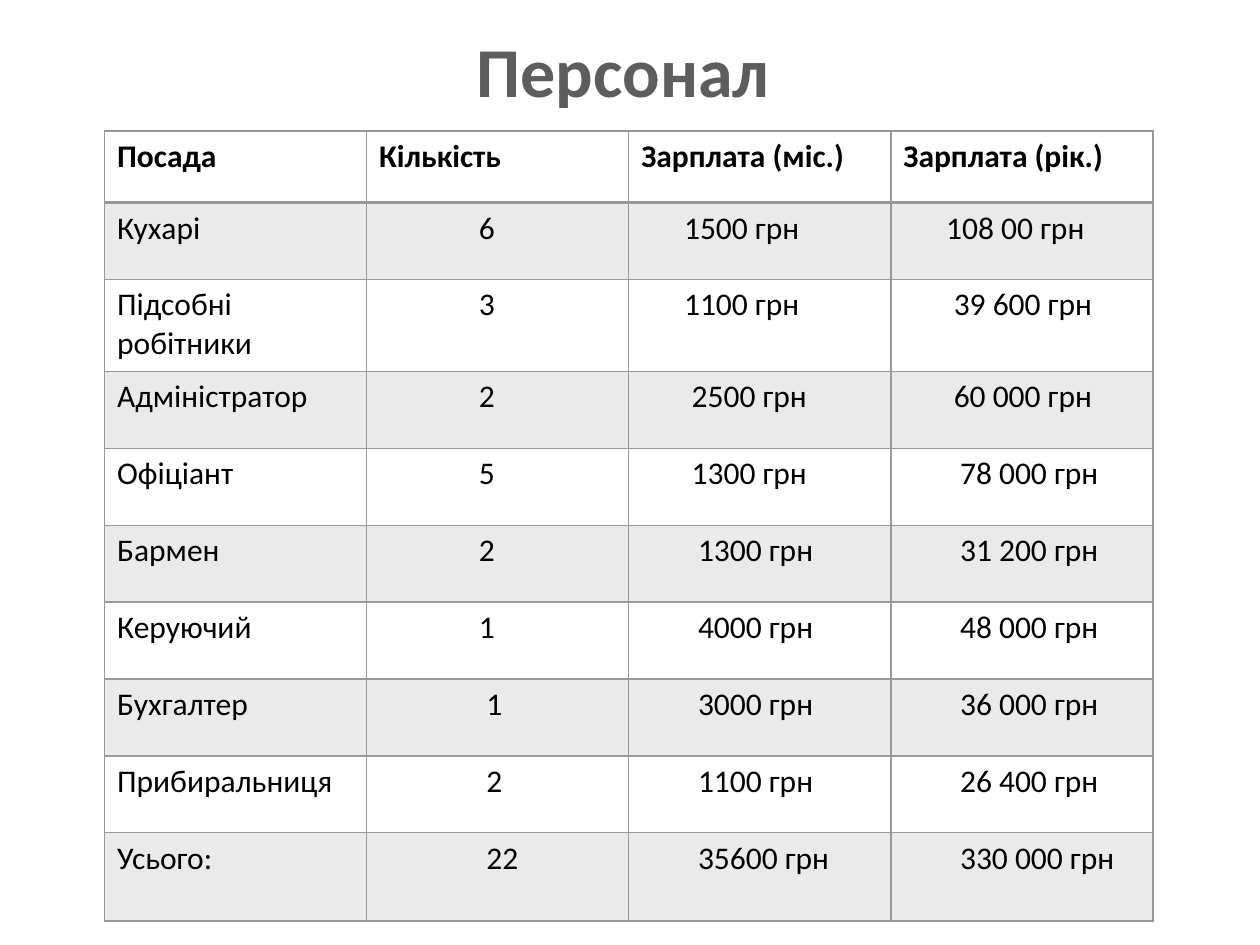
from dataclasses import dataclass
from typing import Any

from lxml import etree
from pptx import Presentation
from pptx import util as u
from pptx.dml.color import RGBColor
from pptx.enum import text as t
from pptx.oxml import ns

HEADINGS = ["Посада", "Кількість", "Зарплата (міс.)", "Зарплата (рік.)"]
STAFF = [
    ("Кухарі", "6", "1500 грн", "108 00 грн"),
    ("Підсобні робітники", "3", "1100 грн", "39 600 грн"),
    ("Адміністратор", "2", "2500 грн", "60 000 грн"),
    ("Офіціант", "5", "1300 грн", "78 000 грн"),
    ("Бармен", "2", "1300 грн", "31 200 грн"),
    ("Керуючий", "1", "4000 грн", "48 000 грн"),
    ("Бухгалтер", "1", "3000 грн", "36 000 грн"),
    ("Прибиральниця", "2", "1100 грн", "26 400 грн"),
    ("Усього:", "22", "35600 грн", "330 000 грн"),
]
INDENTS = [
    [0] * 9,
    [0.79] * 6 + [0.85] * 3,
    [0.34] * 2 + [0.4] * 2 + [0.45] * 5,
    [0.34] + [0.4] * 2 + [0.45] * 6,
]
ROW_HEIGHTS = [0.57, 0.61, 0.73] + [0.61] * 6 + [0.7]
COLUMN_WIDTH = 2.08


def color(value):
    return RGBColor.from_string(value)


def write(frame, content, *, size, fill, font, bold=False, align=t.PP_ALIGN.LEFT):
    paragraph = frame.paragraphs[0]
    paragraph.alignment = align
    run = paragraph.add_run()
    run.text = content
    run.font.name = font
    run.font.size = u.Pt(size)
    run.font.bold = bold
    run.font.color.rgb = color(fill)


@dataclass
class SlideBuilder:
    slide: Any
    font: str = "Calibri"
    title_color: str = "5D5D5D"
    text_color: str = "000000"
    grid_color: str = "999999"
    band_opacity: int = 20

    def title(self, content, left, top, width, height):
        shape = self.slide.shapes.title
        shape.left, shape.top = u.Inches(left), u.Inches(top)
        shape.width, shape.height = u.Inches(width), u.Inches(height)
        frame = shape.text_frame
        frame.word_wrap = False
        frame.auto_size = t.MSO_AUTO_SIZE.NONE
        frame.vertical_anchor = t.MSO_ANCHOR.TOP
        write(frame, content, size=40, fill=self.title_color, font=self.font,
              bold=True, align=t.PP_ALIGN.CENTER)

    def borders(self, cell, bottom):
        properties = cell._tc.get_or_add_tcPr()
        for position, side in enumerate(("L", "R", "T", "B")):
            width = bottom if side == "B" else 1
            line = etree.Element(ns.qn(f"a:ln{side}"), w=str(u.Pt(width)))
            fill = etree.SubElement(line, ns.qn("a:solidFill"))
            etree.SubElement(fill, ns.qn("a:srgbClr"), val=self.grid_color)
            properties.insert(position, line)

    def band(self, cell):
        cell.fill.solid()
        cell.fill.fore_color.rgb = color(self.grid_color)
        value = cell._tc.tcPr.find(f"{ns.qn('a:solidFill')}/{ns.qn('a:srgbClr')}")
        etree.SubElement(value, ns.qn("a:alpha"), val=str(self.band_opacity * 1000))

    def table(self, rows, left, top):
        columns = len(rows[0])
        table = self.slide.shapes.add_table(
            len(rows), columns, u.Inches(left), u.Inches(top),
            u.Inches(COLUMN_WIDTH * columns), u.Inches(sum(ROW_HEIGHTS)),
        ).table
        table.horz_banding = False
        for column in table.columns:
            column.width = u.Inches(COLUMN_WIDTH)
        for row_index, values in enumerate(rows):
            table.rows[row_index].height = u.Inches(ROW_HEIGHTS[row_index])
            header = row_index == 0
            for column_index, value in enumerate(values):
                cell = table.cell(row_index, column_index)
                indent = 0 if header else INDENTS[column_index][row_index - 1]
                cell.margin_left = u.Inches(0.1 + indent)
                write(cell.text_frame, value, size=18, fill=self.text_color,
                      font=self.font, bold=header)
                if row_index % 2:
                    self.band(cell)
                else:
                    cell.fill.background()
                self.borders(cell, bottom=2 if row_index == 0 else 1)
                if row_index == 1:
                    cell._tc.tcPr.find(ns.qn("a:lnT")).set("w", str(u.Pt(2)))


def main():
    presentation = Presentation()
    presentation.slide_width = u.Inches(10)
    presentation.slide_height = u.Inches(7.5)
    builder = SlideBuilder(presentation.slides.add_slide(presentation.slide_layouts[5]))
    builder.title("Персонал", 3.67, 0.17, 2.55, 0.77)
    builder.table([HEADINGS] + STAFF, 0.83, 1.04)
    presentation.save("out.pptx")


if __name__ == "__main__":
    main()
